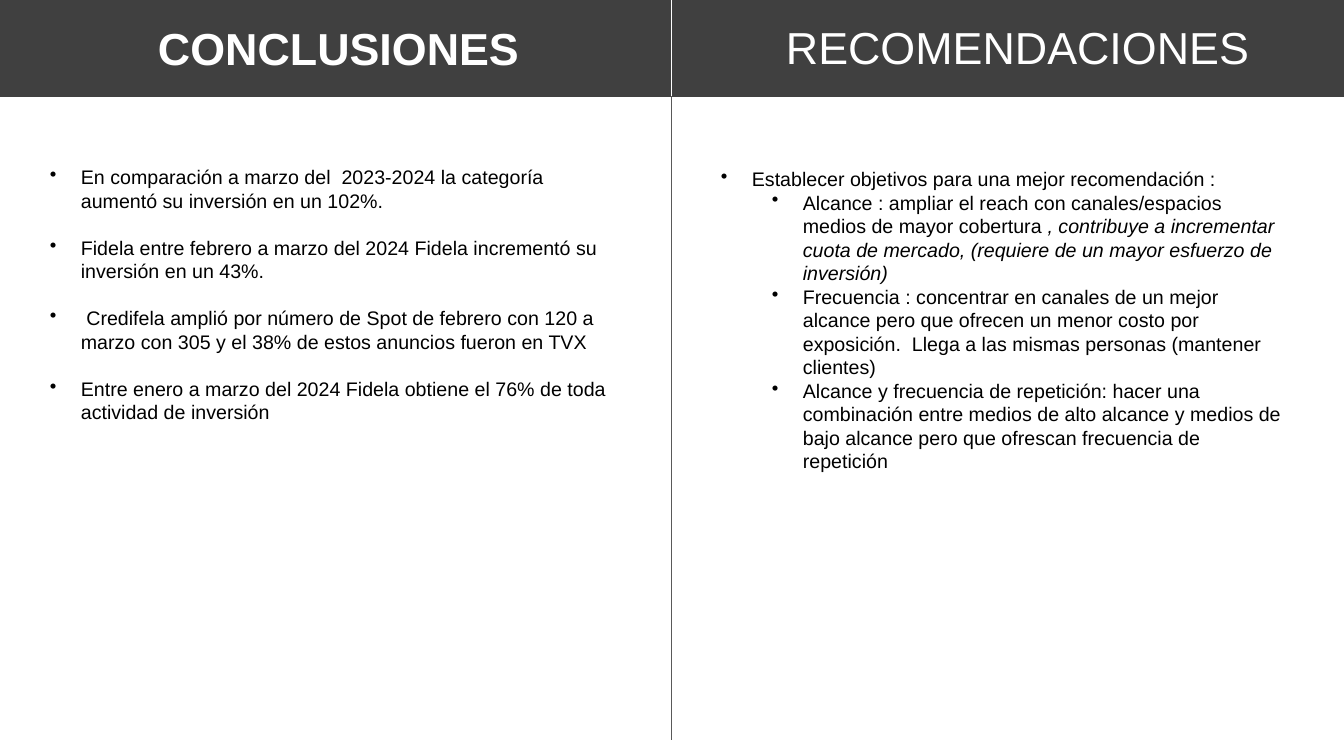
import pptx
import pptx.dml.color
import pptx.enum.shapes
import pptx.enum.text
import pptx.oxml
import pptx.util

WIDTH, HEIGHT = 1344, 756
SCALE = 12192000 / WIDTH
MID, BAR = 671, 96
DARK, WHITE, BLACK, GRAY = "404040", "FFFFFF", "000000", "595959"

FINDINGS = [
    (0, ["En comparación a marzo del  2023-2024 la categoría aumentó su inversión en un 102%."]),
    (0, ["Fidela entre febrero a marzo del 2024 Fidela incrementó su inversión en un 43%."]),
    (0, [" Credifela amplió por número de Spot de febrero con 120 a marzo con 305 y el 38% "
         "de estos anuncios fueron en TVX"]),
    (0, ["Entre enero a marzo del 2024 Fidela obtiene el 76% de toda actividad de inversión"]),
]
ADVICE = [
    (0, ["Establecer objetivos para una mejor recomendación :"]),
    (1, ["Alcance : ampliar el reach con canales/espacios medios de mayor cobertura ",
         ", contribuye a incrementar cuota de mercado, (requiere de un mayor esfuerzo de inversión)"]),
    (1, ["Frecuencia : concentrar en canales de un mejor alcance pero que ofrecen un menor costo "
         "por exposición.  Llega a las mismas personas (mantener clientes)"]),
    (1, ["Alcance y frecuencia de repetición: hacer una combinación entre medios de alto alcance "
         "y medios de bajo alcance pero que ofrescan frecuencia de repetición"]),
]


def px(count):
    return pptx.util.Emu(round(count * SCALE))


def color(code):
    return pptx.dml.color.RGBColor.from_string(code)


def style(run, size, code, bold=False, italic=False):
    font = run.font
    font.name, font.size = "Arial", pptx.util.Pt(size)
    font.bold, font.italic = bold, italic
    font.color.rgb = color(code)


def line(slide, x, top, bottom, code):
    """Draw a thin upright line."""
    kind = pptx.enum.shapes.MSO_CONNECTOR.STRAIGHT
    rule = slide.shapes.add_connector(kind, px(x), px(top), px(x), px(bottom))
    rule.line.color.rgb = color(code)
    rule.line.width = pptx.util.Pt(0.5)
    rule.element.spPr.append(pptx.oxml.parse_xml(
        '<a:effectLst xmlns:a="http://schemas.openxmlformats.org/drawingml/2006/main"/>'))


def header(slide, left, top, width, height):
    """Draw the dark bar with both titles."""
    kind = pptx.enum.shapes.MSO_SHAPE.RECTANGLE
    bar = slide.shapes.add_shape(kind, px(left), px(top), px(width), px(height))
    bar.shadow.inherit = False
    bar.fill.solid()
    bar.fill.fore_color.rgb = color(DARK)
    bar.line.color.rgb = color(DARK)
    bar.line.width = pptx.util.Pt(1)
    frame = bar.text_frame
    frame.text = "CONCLUSIONES"
    frame.margin_left = px(159)
    frame.vertical_anchor = pptx.enum.text.MSO_ANCHOR.MIDDLE
    frame.paragraphs[0].alignment = pptx.enum.text.PP_ALIGN.LEFT
    style(frame.paragraphs[0].runs[0], 32, WHITE, bold=True)

    title = slide.shapes.add_textbox(px(left + 777), px(top + 15), px(518), px(65))
    title.text_frame.word_wrap = True
    title.text_frame.text = "RECOMENDACIONES"
    style(title.text_frame.paragraphs[0].runs[0], 32, WHITE)


def bullet(para, level):
    props = para._p.get_or_add_pPr()
    props.set("marL", str(px(31 + 51 * level)))
    props.set("indent", str(px(-31)))
    props.append(pptx.oxml.parse_xml(
        '<a:buChar xmlns:a="http://schemas.openxmlformats.org/drawingml/2006/main" char="•"/>'))


def points(slide, left, top, width, height, items, gap):
    """Write a bulleted list; the second part of an item is italic."""
    box = slide.shapes.add_textbox(px(left), px(top), px(width), px(height))
    frame = box.text_frame
    frame.word_wrap = True
    frame.margin_top = px(29)
    for index, (level, parts) in enumerate(items):
        para = frame.add_paragraph() if index else frame.paragraphs[0]
        para.level = level
        para.line_spacing = pptx.util.Pt(16.8)
        para.space_after = pptx.util.Pt(gap)
        bullet(para, level)
        for order, part in enumerate(parts):
            run = para.add_run()
            run.text = part
            style(run, 14, BLACK, italic=order > 0)


def main():
    deck = pptx.Presentation()
    deck.slide_width, deck.slide_height = px(WIDTH), px(HEIGHT)
    slide = deck.slides.add_slide(deck.slide_layouts[6])
    points(slide, 40, 136, 584, 450, FINDINGS, 16.8)
    header(slide, -1, 0, WIDTH + 1, BAR)
    line(slide, MID, BAR, 740, GRAY)
    line(slide, MID, 0, BAR, WHITE)
    points(slide, 711, 138, 584, 291, ADVICE, 0)
    deck.save("out.pptx")


if __name__ == "__main__":
    main()
